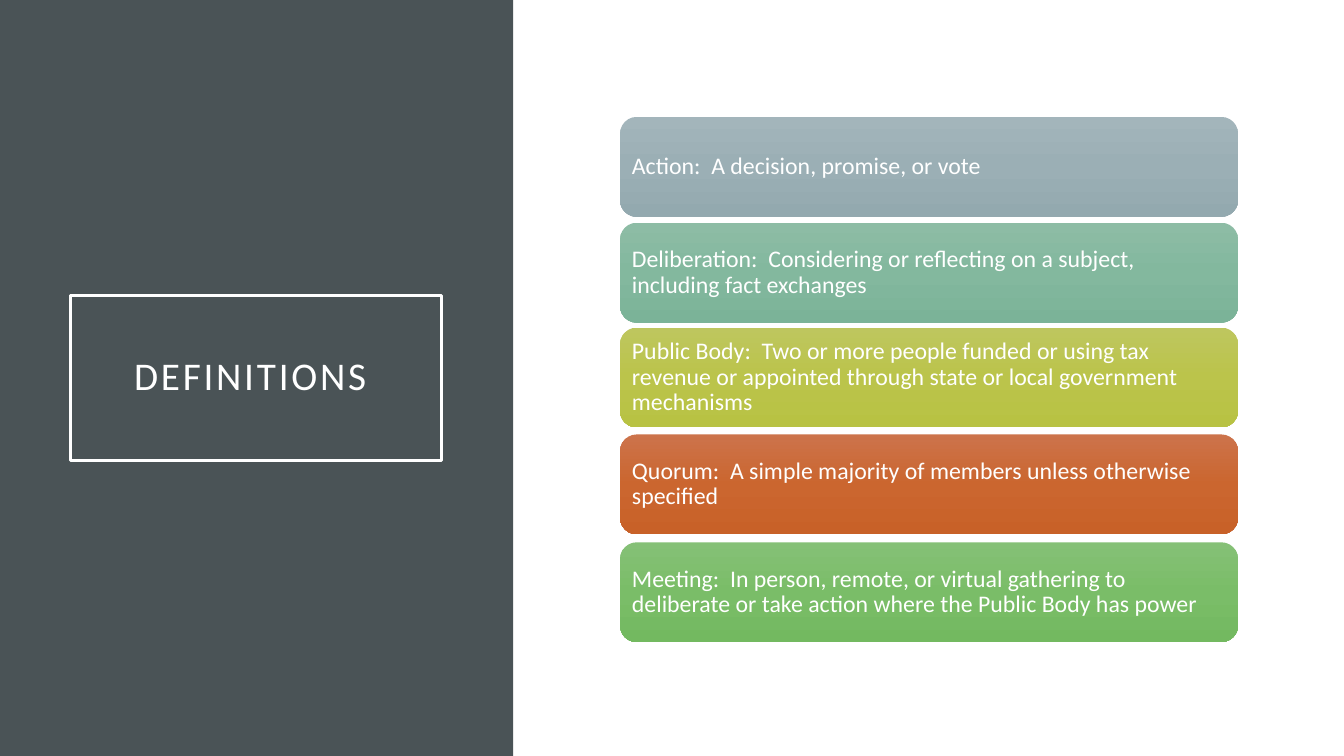
from copy import deepcopy
from dataclasses import dataclass

from pptx import Presentation, util as u
from pptx.dml.color import RGBColor as Rgb
from pptx.enum import shapes, text
from pptx.oxml.ns import qn

PX = 9144  # EMU in one px, 100 px to the inch


@dataclass(frozen=True)
class Theme:
    font: str = "Calibri"
    white: str = "FFFFFF"
    panel: str = "4A5356"
    head: int = 28
    body: int = 17
    frame: float = 2.5
    lead: float = 0.9


class Deck:
    def __init__(self, theme, wide, high):
        self.theme = theme
        self.prs = Presentation()
        self.prs.slide_width, self.prs.slide_height = wide * PX, high * PX
        self.slide = self.prs.slides.add_slide(self.prs.slide_layouts[6])

    def shape(self, kind, box):
        """Add a bare preset shape with no fill, line or shadow."""
        item = self.slide.shapes.add_shape(kind, *(n * PX for n in box))
        item.shadow.inherit = False
        item.fill.background()
        item.line.fill.background()
        return item

    def label(self, item, words, size, align, inset, track=0):
        frame = item.text_frame
        frame.word_wrap = True
        frame.vertical_anchor = text.MSO_ANCHOR.MIDDLE
        frame.margin_left = frame.margin_right = inset * PX
        frame.margin_top = frame.margin_bottom = inset * PX
        para = frame.paragraphs[0]
        para.alignment = align
        para.line_spacing = self.theme.lead
        run = para.add_run()
        run.text = words
        run.font.name = self.theme.font
        run.font.size = u.Pt(size)
        run.font.color.rgb = Rgb.from_string(self.theme.white)
        if track:
            run._r.get_or_add_rPr().set("spc", str(track * 100))

    def panel(self, box):
        item = self.shape(shapes.MSO_SHAPE.RECTANGLE, box)
        item.fill.solid()
        item.fill.fore_color.rgb = Rgb.from_string(self.theme.panel)

    def title(self, words, box):
        item = self.shape(shapes.MSO_SHAPE.RECTANGLE, box)
        item.line.color.rgb = Rgb.from_string(self.theme.white)
        item.line.width = u.Pt(self.theme.frame)
        self.label(item, words, self.theme.head, text.PP_ALIGN.CENTER, 20, track=2)

    def card(self, words, box, tones):
        item = self.shape(shapes.MSO_SHAPE.ROUNDED_RECTANGLE, box)
        self.shade(item, tones)
        self.label(item, words, self.theme.body, text.PP_ALIGN.LEFT, 7)

    def shade(self, item, tones):
        """Fill from top to bottom with three evenly spaced tones."""
        fill = item.fill
        fill.gradient()
        fill.gradient_angle = 270
        stops = item._element.spPr.find(qn("a:gradFill")).find(qn("a:gsLst"))
        stops.insert(1, deepcopy(stops[0]))
        for stop, place, tone in zip(fill.gradient_stops, (0, 0.5, 1), tones):
            stop.position = place
            stop.color.rgb = Rgb.from_string(tone)


TERMS = [
    (116, "Action:  A decision, promise, or vote",
     ("A3B5BB", "9BAFB5", "93A9AF")),
    (221, "Deliberation:  Considering or reflecting on a subject, "
     "including fact exchanges",
     ("8DBCA5", "83B89E", "7BB398")),
    (325, "Public Body:  Two or more people funded or using tax revenue "
     "or appointed through state or local government mechanisms",
     ("BEC65E", "BBC44B", "B8C243")),
    (431, "Quorum:  A simple majority of members unless otherwise specified",
     ("CC734B", "CB662F", "C86128")),
    (538, "Meeting:  In person, remote, or virtual gathering to deliberate "
     "or take action where the Public Body has power",
     ("85C076", "7ABD68", "73B960")),
]


def main():
    deck = Deck(Theme(), 1333, 750)
    deck.panel((0, 0, 509, 750))
    deck.title("DEFINITIONS ", (70, 293, 368, 164))
    for top, words, tones in TERMS:
        deck.card(words, (615, top, 613, 99), tones)
    deck.prs.save("out.pptx")


if __name__ == "__main__":
    main()
